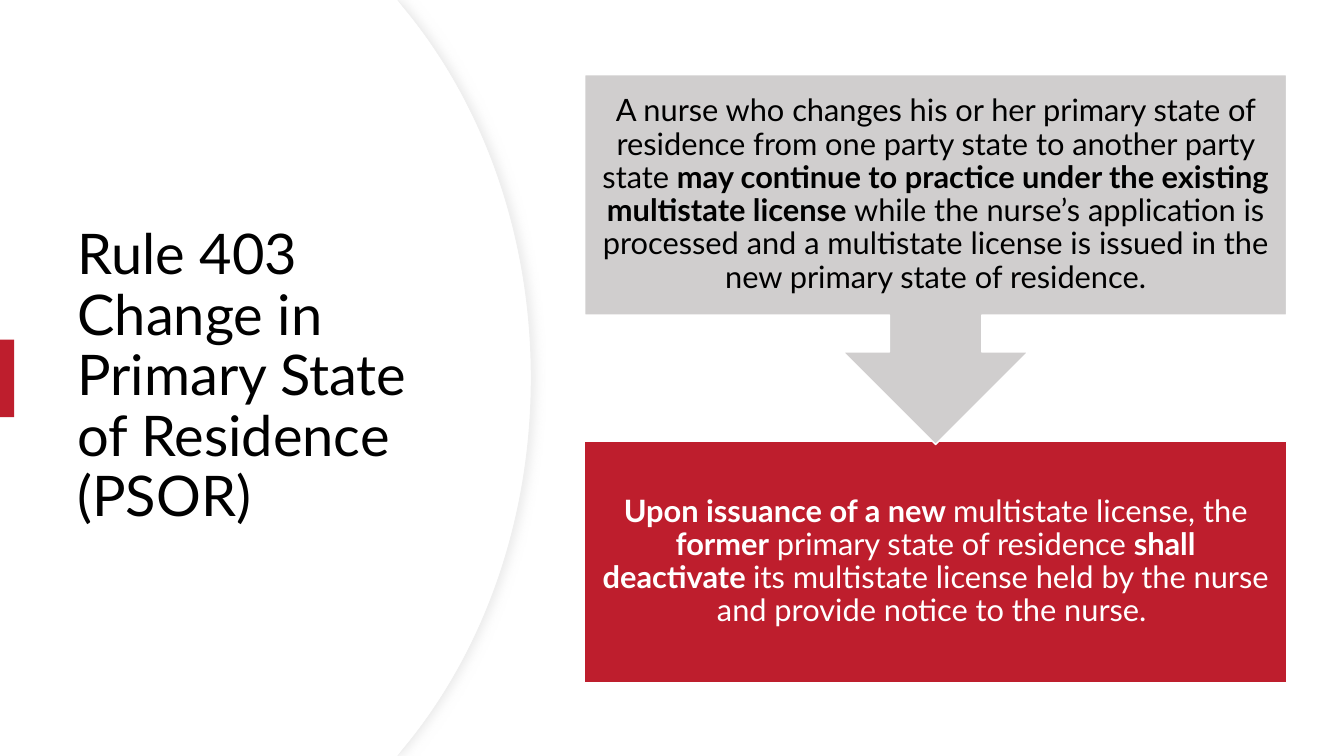
from lxml.etree import SubElement
from pptx import Presentation
from pptx.dml.color import RGBColor
from pptx.enum.shapes import MSO_SHAPE
from pptx.enum.text import MSO_ANCHOR, PP_ALIGN
from pptx.oxml.ns import qn
from pptx.util import Inches, Pt

RED = RGBColor(0xBE, 0x1E, 0x2D)
GREY = RGBColor(0xD0, 0xCE, 0xCE)
EDGE = RGBColor(0xEF, 0xEF, 0xEF)
WHITE = RGBColor(0xFF, 0xFF, 0xFF)
BLACK = RGBColor(0, 0, 0)
FONT = "Lato"

TITLE = [("Rule 403\nChange in Primary State of Residence (PSOR)", False)]
CONTINUE_RULE = [
    ("A nurse who changes his or her primary state of residence from one party state to another party state ", False),
    ("may continue to practice under the existing multistate license ", True),
    ("while the nurse’s application is processed and a multistate license is issued in the new primary state of residence.", False),
]
DEACTIVATE_RULE = [
    ("Upon issuance of a new ", True),
    ("multistate license, the ", False),
    ("former", True),
    (" primary state of residence ", False),
    ("shall deactivate ", True),
    ("its multistate license held by the nurse and provide notice to the nurse. ", False),
]

SLIDE_W, SLIDE_H = 13.33, 7.5
STEP_X, STEP_W, STEP_H = 5.8, 6.96, 2.39
CALLOUT_Y, CALLOUT_H = 0.74, 3.67
DEACTIVATE_Y = 4.38
UNITS = 1000


def add_text(s, runs, x, y, w, h, size, color=BLACK, align=PP_ALIGN.LEFT,
             inset_x=0.1, inset_y=0.05, after=0):
    tf = s.shapes.add_textbox(Inches(x), Inches(y), Inches(w), Inches(h)).text_frame
    tf.word_wrap = True
    tf.vertical_anchor = MSO_ANCHOR.MIDDLE
    tf.margin_left = tf.margin_right = Inches(inset_x)
    tf.margin_top = tf.margin_bottom = Inches(inset_y)
    p = tf.paragraphs[0]
    p.alignment = align
    p.line_spacing = 0.9
    p.space_after = Pt(after)
    for text, bold in runs:
        for i, line in enumerate(text.split("\n")):
            if i:
                p.add_line_break()
            r = p.add_run()
            r.text = line
            r.font.name = FONT
            r.font.size = Pt(size)
            r.font.bold = bold
            r.font.color.rgb = color


def style(sp, fill, line=None, width=1):
    sp.shadow.inherit = False
    sp.fill.solid()
    sp.fill.fore_color.rgb = fill
    if line is None:
        sp.line.fill.background()
    else:
        sp.line.color.rgb = line
        sp.line.width = Pt(width)
    return sp


def add_box(s, kind, x, y, w, h, fill, line=None):
    sp = s.shapes.add_shape(kind, Inches(x), Inches(y), Inches(w), Inches(h))
    return style(sp, fill, line)


def bend(segment, controls):
    curve = segment.makeelement(qn("a:cubicBezTo"))
    for x, y in controls:
        SubElement(curve, qn("a:pt"), x=str(round(x * UNITS)), y=str(round(y * UNITS)))
    curve.append(segment[0])
    segment.getparent().replace(segment, curve)


def add_curved_panel(s, right, line=None):
    mid = SLIDE_H / 2
    shoulder, bulge = right - 1.26, right - 0.48
    points = [(3.94, 0), (shoulder, 0.08), (right, mid),
              (shoulder, SLIDE_H - 0.08), (3.94, SLIDE_H), (0, SLIDE_H)]
    outline = s.shapes.build_freeform(0, 0, scale=Inches(1) / UNITS)
    outline.add_line_segments([(round(x * UNITS), round(y * UNITS)) for x, y in points], close=True)
    sp = outline.convert_to_shape()
    segments = list(sp._element.iter(qn("a:lnTo")))
    bend(segments[2], [(bulge, 1.02), (right, 2.32)])
    bend(segments[3], [(right, SLIDE_H - 2.32), (bulge, SLIDE_H - 1.02)])
    return style(sp, WHITE, line, 0.75)


def add_soft_shadow(sp):
    effects = sp._element.spPr.find(qn("a:effectLst"))
    shadow = SubElement(effects, qn("a:outerShdw"), blurRad=str(Pt(7)),
                        dist=str(Pt(3)), dir="0", algn="l", rotWithShape="0")
    tint = SubElement(shadow, qn("a:srgbClr"), val="D9D9D9")
    SubElement(tint, qn("a:alpha"), val="50000")


prs = Presentation()
prs.slide_width, prs.slide_height = Inches(SLIDE_W), Inches(SLIDE_H)
s = prs.slides.add_slide(prs.slide_layouts[6])

add_soft_shadow(add_curved_panel(s, 5.27, EDGE))
add_curved_panel(s, 5.26)
add_text(s, TITLE, 0.67, 1.27, 3.94, 4.95, 40)
add_box(s, MSO_SHAPE.RECTANGLE, 0, 3.37, 0.14, 0.77, RED)

add_box(s, MSO_SHAPE.RECTANGLE, STEP_X, DEACTIVATE_Y, STEP_W, STEP_H, RED, WHITE)
callout = add_box(s, MSO_SHAPE.UP_ARROW_CALLOUT, STEP_X, CALLOUT_Y, STEP_W, CALLOUT_H, GREY, WHITE)
callout.rotation = 180

for runs, y, color in [(DEACTIVATE_RULE, DEACTIVATE_Y, WHITE), (CONTINUE_RULE, CALLOUT_Y, BLACK)]:
    add_text(s, runs, STEP_X, y, STEP_W, STEP_H, 22, color=color,
             align=PP_ALIGN.CENTER, inset_x=0.17, inset_y=0.17, after=7.7)

prs.save("out.pptx")
